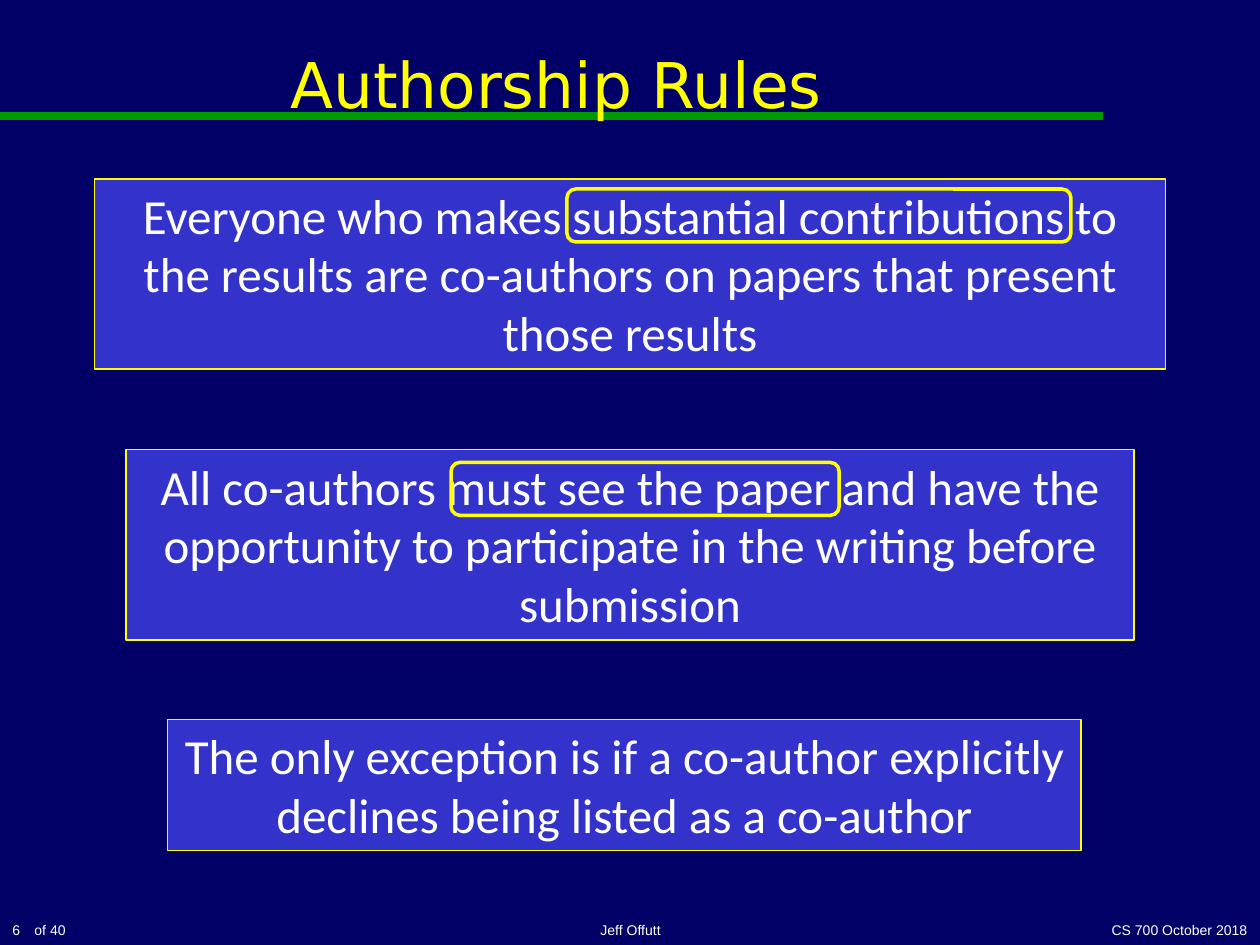
"""Build the Authorship Rules slide."""
from pptx import Presentation
from pptx.dml.color import RGBColor
from pptx.enum.shapes import MSO_CONNECTOR, MSO_SHAPE
from pptx.enum.text import MSO_ANCHOR, PP_ALIGN
from pptx.oxml.ns import qn
from pptx.util import Inches, Pt
from lxml.etree import SubElement

COLORS = {
    "background": "000066",
    "rule": "009900",
    "panel": "3333CC",
    "highlight": "FFFF00",
    "text": "FFFFFF",
}
FORMATS = {
    "title": {"name": "DejaVu Sans", "size": Pt(36)},
    "body": {"name": "Calibri", "size": Pt(28)},
    "footer": {"name": "Arial", "size": Pt(8)},
}


def color(name):
    return RGBColor.from_string(COLORS[name])


def write_text(shape, text, style, color_name, alignment, anchor, wrap=True):
    frame = shape.text_frame
    frame.word_wrap = wrap
    frame.vertical_anchor = anchor
    paragraph = frame.paragraphs[0]
    paragraph.text = text
    paragraph.alignment = alignment
    for attribute, value in FORMATS[style].items():
        setattr(paragraph.font, attribute, value)
    paragraph.font.color.rgb = color(color_name)


presentation = Presentation()
presentation.slide_width = Inches(10)
presentation.slide_height = Inches(7.5)
slide = presentation.slides.add_slide(presentation.slide_layouts[6])
slide.background.fill.solid()
slide.background.fill.fore_color.rgb = color("background")

title_rule = slide.shapes.add_connector(
    MSO_CONNECTOR.STRAIGHT, Inches(0), Inches(0.92), Inches(8.75), Inches(0.92)
)
title_rule.line.color.rgb = color("rule")
title_rule.line.width = Pt(4.5)
SubElement(title_rule._element.spPr, qn("a:effectLst"))

title = slide.shapes.add_textbox(Inches(0.08), Inches(0), Inches(8.67), Inches(1.33))
write_text(title, "Authorship Rules", "title", "highlight", PP_ALIGN.CENTER, MSO_ANCHOR.MIDDLE)

footers = [
    ("of 40", 0.17, 0.45, 0.24, PP_ALIGN.RIGHT, False),
    ("Jeff Offutt", 3.42, 3.17, 0.33, PP_ALIGN.CENTER, True),
    ("6", 0, 1.75, 0.33, PP_ALIGN.LEFT, True),
    ("CS 700 October 2018", 7.92, 2.08, 0.33, PP_ALIGN.RIGHT, True),
]
for text, left, width, height, alignment, wrap in footers:
    footer = slide.shapes.add_textbox(
        Inches(left), Inches(7.5 - height), Inches(width), Inches(height)
    )
    write_text(footer, text, "footer", "text", alignment, MSO_ANCHOR.BOTTOM, wrap)

rules = [
    ("Everyone who makes substantial contributions to the results are "
     "co-authors on papers that present those results", 0.75, 1.42, 8.5, 1.51),
    ("All co-authors must see the paper and have the opportunity to "
     "participate in the writing before submission", 1, 3.57, 8, 1.51),
    ("The only exception is if a co-author explicitly declines being "
     "listed as a co-author", 1.33, 5.71, 7.25, 1.04),
]
for text, left, top, width, height in rules:
    panel = slide.shapes.add_shape(
        MSO_SHAPE.RECTANGLE, Inches(left), Inches(top), Inches(width), Inches(height)
    )
    panel.shadow.inherit = False
    panel.fill.solid()
    panel.fill.fore_color.rgb = color("panel")
    panel.line.color.rgb = color("highlight")
    panel.line.width = Pt(0.75)
    write_text(panel, text, "body", "text", PP_ALIGN.CENTER, MSO_ANCHOR.TOP)

for left, top, width in [(4.5, 1.5, 4), (3.58, 3.67, 3.08)]:
    marker = slide.shapes.add_shape(
        MSO_SHAPE.ROUNDED_RECTANGLE, Inches(left), Inches(top), Inches(width), Inches(0.42)
    )
    marker.shadow.inherit = False
    marker.fill.background()
    marker.line.color.rgb = color("highlight")
    marker.line.width = Pt(2)

presentation.save("out.pptx")
